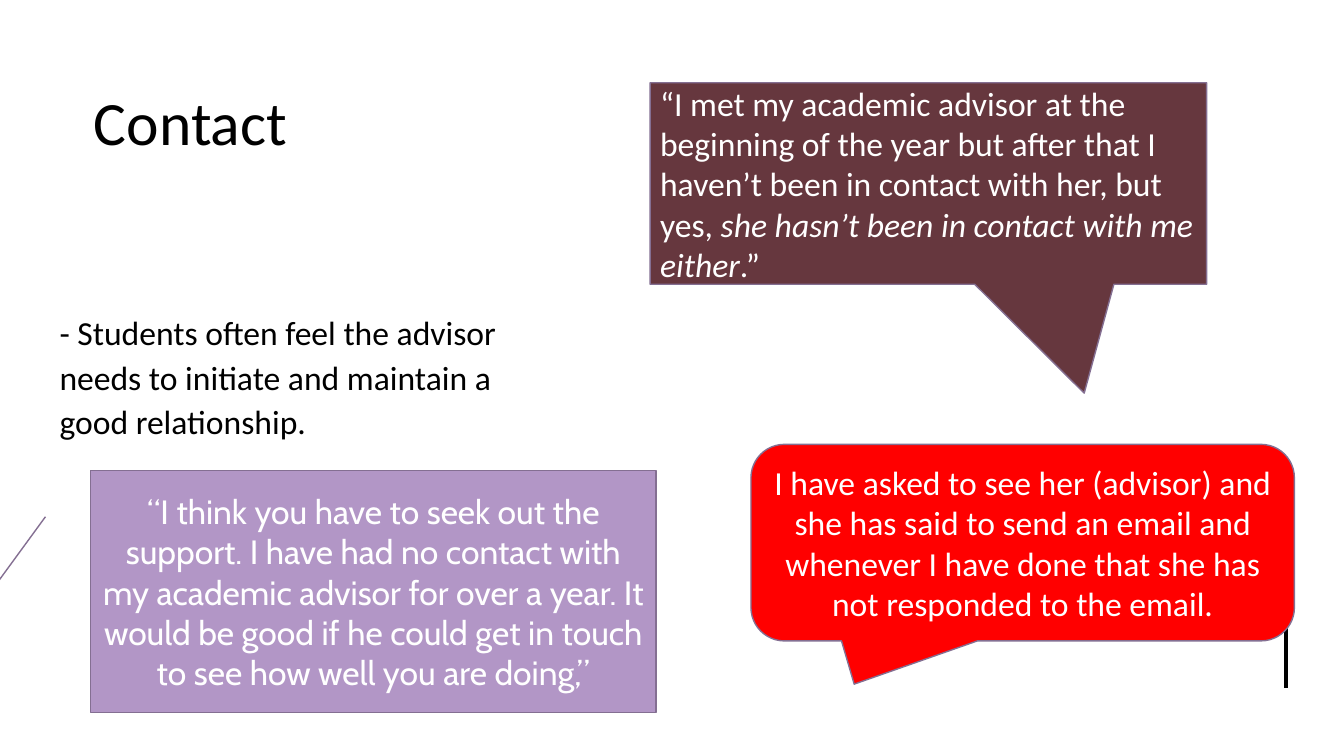
from dataclasses import dataclass

from lxml import etree
from pptx import Presentation, util as u
from pptx.dml.color import RGBColor
from pptx.enum import shapes, text
from pptx.oxml.ns import qn

COLS, ROWS = 32, 18
KIND = shapes.MSO_SHAPE
ALIGN = text.PP_ALIGN
ANCHOR = text.MSO_ANCHOR


@dataclass(frozen=True)
class Theme:
    ink: str = "000000"
    white: str = "FFFFFF"
    wine: str = "66373E"
    red: str = "FF0000"
    lilac: str = "B296C6"
    edge: str = "846F92"
    head: int = 44
    body: int = 24
    font: str = "Calibri"
    alt: str = "Cabin"


def write(shape, runs, color, size, font, align=ALIGN.LEFT, anchor=ANCHOR.MIDDLE,
          lead=None, before=0, after=0):
    frame = shape.text_frame
    frame.word_wrap = True
    frame.vertical_anchor = anchor
    para = frame.paragraphs[0]
    para.alignment = align
    para.line_spacing = lead
    para.space_before, para.space_after = u.Pt(before), u.Pt(after)
    for words, slant in runs:
        run = para.add_run()
        run.text = words
        run.font.name, run.font.size = font, u.Pt(size)
        run.font.italic = slant
        run.font.color.rgb = RGBColor.from_string(color)


class Board:
    def __init__(self, deck, theme):
        self.theme = theme
        self.cell = deck.slide_width / COLS, deck.slide_height / ROWS
        self.slide = deck.slides.add_slide(deck.slide_layouts[6])

    def place(self, *spots):
        return [u.Emu(round(n * self.cell[i % 2])) for i, n in enumerate(spots)]

    def label(self, box, words, size, **form):
        shape = self.slide.shapes.add_textbox(*self.place(*box))
        write(shape, [(words, False)], self.theme.ink, size, self.theme.font, **form)

    def quote(self, kind, box, tips, fill, runs, font=None, **form):
        shape = self.slide.shapes.add_shape(kind, *self.place(*box))
        shape.shadow.inherit = False
        for i, tip in enumerate(tips):
            shape.adjustments[i] = tip
        shape.fill.solid()
        shape.fill.fore_color.rgb = RGBColor.from_string(fill)
        shape.line.color.rgb = RGBColor.from_string(self.theme.edge)
        shape.line.width = u.Pt(1)
        write(shape, runs, self.theme.white, self.theme.body,
              font or self.theme.font, **form)

    def rule(self, ends, width):
        line = self.slide.shapes.add_connector(
            shapes.MSO_CONNECTOR.STRAIGHT, *self.place(*ends))
        line.line.color.rgb = RGBColor.from_string(self.theme.ink)
        line.line.width = u.Pt(width)
        etree.SubElement(line._element.spPr, qn("a:effectLst"))


def main():
    deck = Presentation()
    deck.slide_width, deck.slide_height = u.Inches(13.33), u.Inches(7.5)
    theme = Theme()
    board = Board(deck, theme)

    board.rule((30.62, 14.81, 30.62, 16.37), 3)
    board.label((2, 1, 27.24, 3.77), "Contact", theme.head)
    board.label((1.18, 7.22, 12.38, 8.57),
                "- Students often feel the advisor needs to initiate and maintain "
                "a good relationship.",
                theme.body, anchor=ANCHOR.TOP, lead=1.1, before=10)
    board.quote(KIND.RECTANGULAR_CALLOUT, (15.48, 1.97, 13.25, 4.8),
                (0.28, 1.04), theme.wine,
                [("“I met my academic advisor at the beginning of the year but after "
                  "that I haven’t been in contact with her, but yes, ", False),
                 ("she hasn’t been in contact with me either", True),
                 (".”", False)], after=12)
    board.quote(KIND.ROUNDED_RECTANGULAR_CALLOUT, (17.88, 10.58, 12.94, 4.68),
                (-0.31, 0.72, 0.17), theme.red,
                [("I have asked to see her (advisor) and she has said to send an email "
                  "and whenever I have done that she has not responded to the email.",
                  False)], align=ALIGN.CENTER)
    board.quote(KIND.LINE_CALLOUT_1, (2.16, 11.21, 13.46, 5.76),
                (0.19, -0.08, 0.67, -0.23), theme.lilac,
                [("“I think you have to seek out the support. I have had no contact "
                  "with my academic advisor for over a year. It would be good if he "
                  "could get in touch to see how well you are doing,”", False)],
                font=theme.alt, align=ALIGN.CENTER)

    deck.save("out.pptx")


if __name__ == "__main__":
    main()
